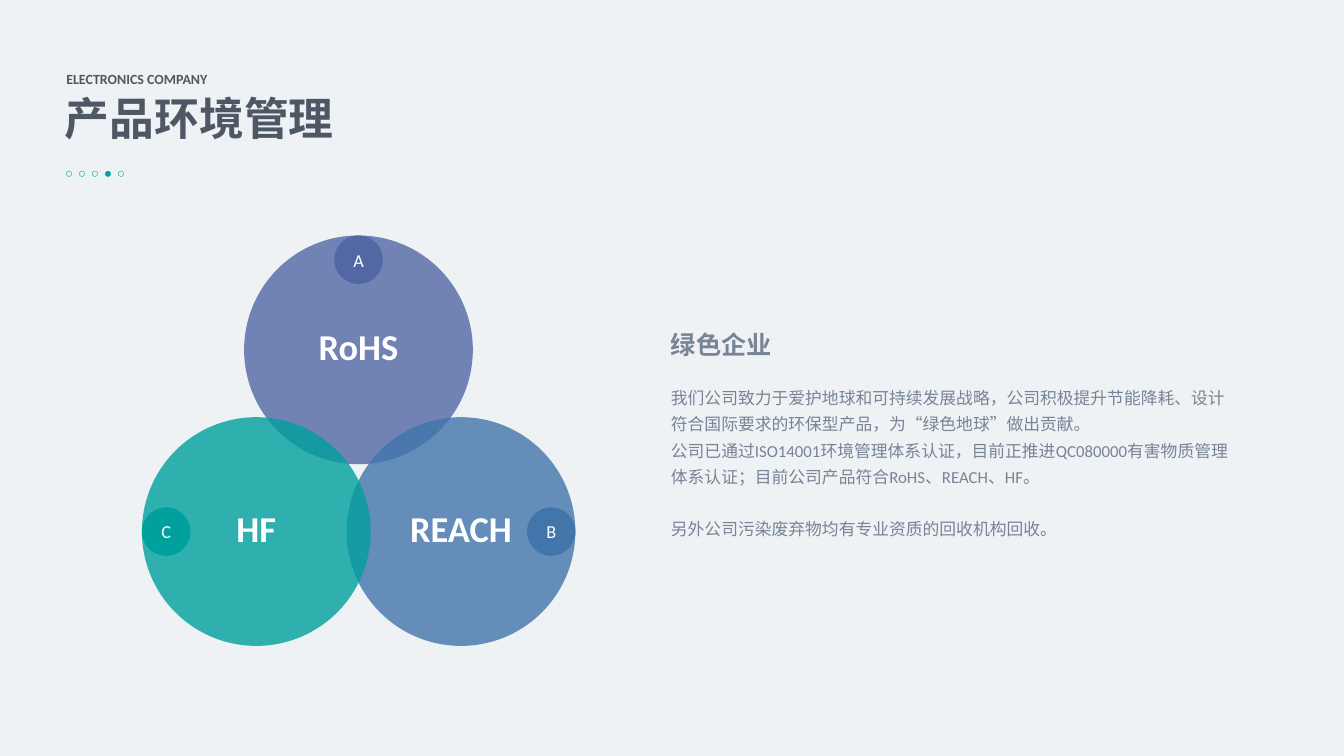
from lxml import etree
from pptx import Presentation
from pptx import util as u
from pptx.dml.color import RGBColor
from pptx.enum import shapes, text
from pptx.oxml.ns import qn

BACKGROUND = RGBColor(0xEE, 0xF2, 0xF5)
DARK = RGBColor(0x4E, 0x58, 0x65)
GREY = RGBColor(0x77, 0x84, 0x96)
WHITE = RGBColor(0xFF, 0xFF, 0xFF)
INDIGO = RGBColor(0x52, 0x68, 0xA5)
BLUE = RGBColor(0x42, 0x76, 0xAA)
TEAL = RGBColor(0x00, 0xA0, 0x9D)

DISC, BADGE = 163.4, 34.6
LABEL_WIDTH, LABEL_HEIGHT, LABEL_TOP = 118, 39.6, 50.4
DOT, DOT_PITCH = 3.8, 9.28


class SlideBuilder:
    """Holds the text style and the current slide."""

    font_name = "Calibri"

    def __init__(self, slide):
        self.slide = slide

    def background(self, color):
        fill = self.slide.background.fill
        fill.solid()
        fill.fore_color.rgb = color

    def group(self):
        return self.slide.shapes.add_group_shape().shapes

    def style(self, paragraph, size, color, bold=False):
        font = paragraph.font
        font.name, font.size, font.bold = self.font_name, u.Pt(size), bold
        font.color.rgb = color

    def circle(self, parent, left, top, size, fill=None, line=None, opacity=100):
        shape = parent.add_shape(shapes.MSO_SHAPE.OVAL, u.Pt(left), u.Pt(top),
                                 u.Pt(size), u.Pt(size))
        shape.shadow.inherit = False
        if fill is None:
            shape.fill.background()
        else:
            shape.fill.solid()
            shape.fill.fore_color.rgb = fill
            if opacity < 100:
                color = shape.fill._xPr.find(qn("a:solidFill"))[0]
                etree.SubElement(color, qn("a:alpha"), val=str(opacity * 1000))
        if line is None:
            shape.line.fill.background()
        else:
            shape.line.color.rgb = line
            shape.line.width = u.Pt(0.25)
        return shape

    def badge(self, parent, left, top, letter, color):
        frame = self.circle(parent, left, top, BADGE, color).text_frame
        frame.vertical_anchor = text.MSO_ANCHOR.MIDDLE
        paragraph = frame.paragraphs[0]
        paragraph.text = letter
        paragraph.alignment = text.PP_ALIGN.CENTER
        self.style(paragraph, 13, WHITE)

    def text_box(self, parent, left, top, width, height, lines, wrap=True,
                 spacing=None, align=None):
        """Each line is (words, size, color, bold, space before)."""
        frame = parent.add_textbox(u.Pt(left), u.Pt(top), u.Pt(width),
                                   u.Pt(height)).text_frame
        frame.word_wrap = wrap
        frame.auto_size = text.MSO_AUTO_SIZE.SHAPE_TO_FIT_TEXT
        for index, (words, size, color, bold, before) in enumerate(lines):
            paragraph = frame.add_paragraph() if index else frame.paragraphs[0]
            paragraph.text = words
            paragraph.alignment = align
            paragraph.line_spacing = spacing
            if before:
                paragraph.space_before = u.Pt(before)
            self.style(paragraph, size, color, bold)

    def standard(self, left, top, color, letter, badge_x, badge_y, name):
        """A translucent disc; the badge offsets are fractions of its free space."""
        parent = self.group()
        free = DISC - BADGE
        self.circle(parent, left, top, DISC, color, opacity=80)
        self.badge(parent, left + free * badge_x, top + free * badge_y, letter, color)
        self.text_box(parent, left + (DISC - LABEL_WIDTH) / 2, top + LABEL_TOP,
                      LABEL_WIDTH, LABEL_HEIGHT, [(name, 26, WHITE, True, 0)],
                      spacing=1.3, align=text.PP_ALIGN.CENTER)


def main():
    presentation = Presentation()
    presentation.slide_width, presentation.slide_height = u.Pt(960), u.Pt(540)
    slide = presentation.slides.add_slide(presentation.slide_layouts[6])
    builder = SlideBuilder(slide)
    builder.background(BACKGROUND)

    # Title and company line
    builder.text_box(slide.shapes, 39.2, 61.2, 208, 46,
                     [("产品环境管理", 32, DARK, True, 0)], wrap=False)
    builder.text_box(slide.shapes, 40.3, 46.8, 122.4, 19.4,
                     [("ELECTRONICS COMPANY", 10, DARK, True, 0)], wrap=False)

    # Progress dots, the fourth one filled
    dots = builder.group()
    for step in range(5):
        builder.circle(dots, 47.4 + step * DOT_PITCH, 122.3, DOT,
                       TEAL if step == 3 else None, TEAL)

    # Three overlapping standards
    for standard in [
        (174.4, 168.2, INDIGO, "A", 0.5, 0, "RoHS"),
        (247.6, 298, BLUE, "B", 1, 0.5, "REACH"),
        (101.4, 298, TEAL, "C", 0, 0.5, "HF"),
    ]:
        builder.standard(*standard)

    # Description
    builder.text_box(slide.shapes, 472.2, 225.4, 413.4, 163.4, [
        ("绿色企业", 18, GREY, True, 0),
        ("我们公司致力于爱护地球和可持续发展战略，公司积极提升节能降耗、"
         "设计符合国际要求的环保型产品，为“绿色地球”做出贡献。", 12, GREY, False, 15.8),
        ("公司已通过ISO14001环境管理体系认证，目前正推进QC080000有害物质"
         "管理体系认证；目前公司产品符合RoHS、REACH、HF。", 12, GREY, False, 0),
        ("另外公司污染废弃物均有专业资质的回收机构回收。", 12, GREY, False, 18.6),
    ], spacing=1.3)

    presentation.save("out.pptx")


if __name__ == "__main__":
    main()
